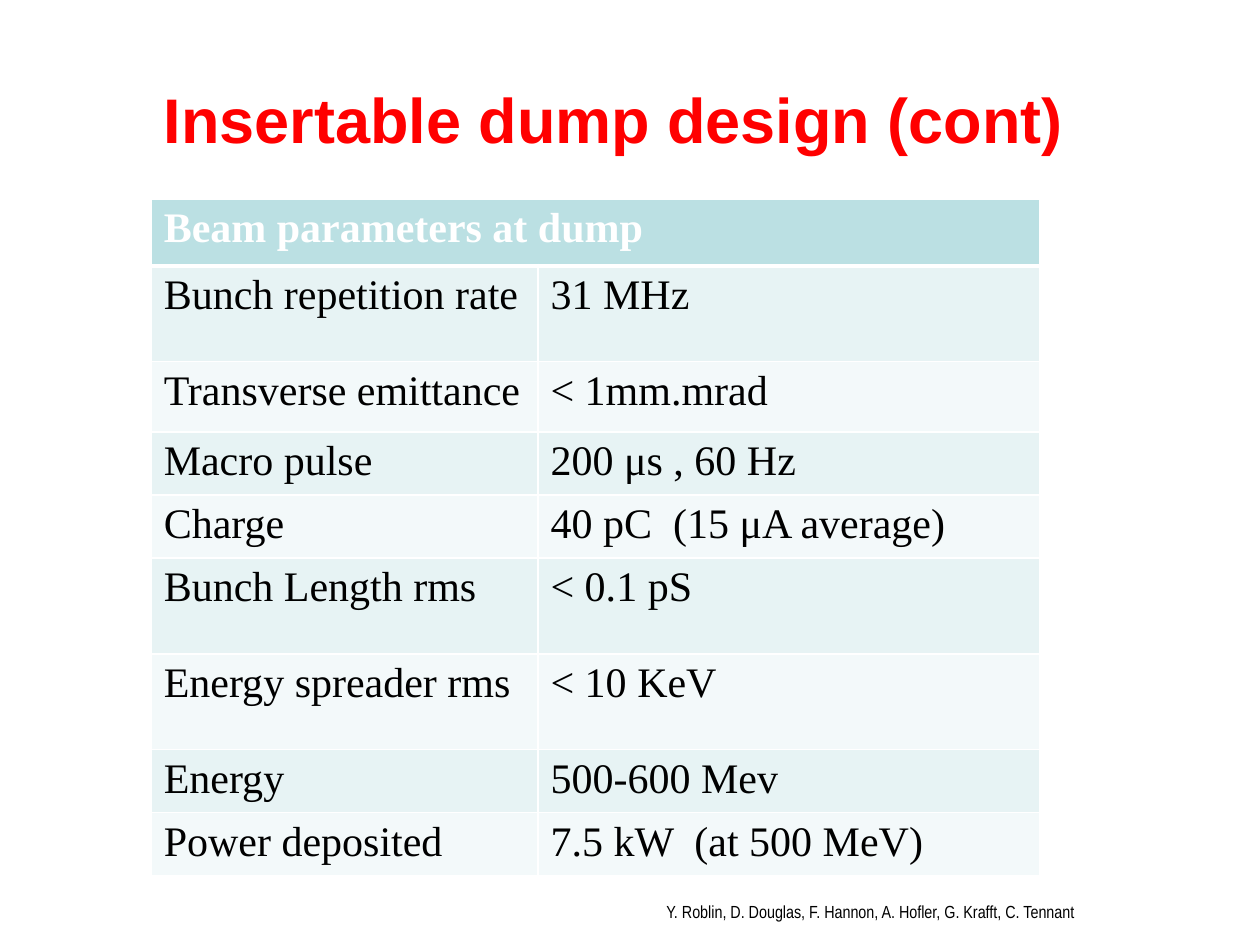
from lxml.etree import SubElement
from pptx import Presentation
from pptx.dml.color import RGBColor
from pptx.enum.text import MSO_ANCHOR, PP_ALIGN
from pptx.oxml import parse_xml
from pptx.oxml.ns import nsdecls
from pptx.util import Inches, Pt

RED = RGBColor(0xFF, 0x00, 0x00)
BLACK = RGBColor(0x00, 0x00, 0x00)
WHITE = RGBColor(0xFF, 0xFF, 0xFF)
HEADER_TEAL = RGBColor(0xBB, 0xE0, 0xE3)
BAND_DARK = RGBColor(0xE7, 0xF3, 0xF4)
BAND_LIGHT = RGBColor(0xF3, 0xF9, 0xFA)

TABLE_HEADING = "Beam parameters at dump"
BEAM_PARAMETERS = [
    ("Bunch repetition rate", "31 MHz"),
    ("Transverse emittance", "< 1mm.mrad"),
    ("Macro pulse", "200 μs , 60 Hz"),
    ("Charge", "40 pC  (15 μA average)"),
    ("Bunch Length rms", "< 0.1 pS"),
    ("Energy spreader rms", "< 10 KeV"),
    ("Energy", "500-600 Mev"),
    ("Power deposited", "7.5 kW  (at 500 MeV)"),
]
COLUMN_WIDTHS = [3.07, 3.98]
ROW_HEIGHTS = [0.53, 0.76, 0.56, 0.49, 0.49, 0.76, 0.76, 0.49, 0.49]


class SlideBuilder:
    title_font = "Arial"
    table_font = "Times New Roman"
    credit_font = "Arial Narrow"

    def __init__(self, slide):
        self.slide = slide

    def add_run(self, paragraph, text, font, size, color, bold=False):
        run = paragraph.add_run()
        run.text = text
        run.font.name = font
        run.font.size = Pt(size)
        run.font.bold = bold
        run.font.color.rgb = color

    def add_text(self, text, left, top, width, height, font, size, color,
                 bold=False, align=PP_ALIGN.LEFT, anchor=MSO_ANCHOR.TOP):
        box = self.slide.shapes.add_textbox(
            Inches(left), Inches(top), Inches(width), Inches(height))
        frame = box.text_frame
        frame.word_wrap = True
        frame.vertical_anchor = anchor
        paragraph = frame.paragraphs[0]
        paragraph.alignment = align
        self.add_run(paragraph, text, font, size, color, bold)

    def set_borders(self, cell, top=1, bottom=1):
        """Draw white cell borders; widths are in points."""
        properties = cell._tc.get_or_add_tcPr()
        widths = {"lnL": 1, "lnR": 1, "lnT": top, "lnB": bottom}
        for index, (tag, width) in enumerate(widths.items()):
            line = parse_xml(
                f'<a:{tag} {nsdecls("a")} w="{Pt(width)}"><a:solidFill>'
                f'<a:srgbClr val="{WHITE}"/></a:solidFill></a:{tag}>')
            properties.insert(index, line)

    def style_cell(self, cell, fill, top=1, bottom=1):
        cell.fill.solid()
        cell.fill.fore_color.rgb = fill
        self.set_borders(cell, top, bottom)

    def add_parameter_table(self, left, top):
        frame = self.slide.shapes.add_table(
            len(ROW_HEIGHTS), len(COLUMN_WIDTHS), Inches(left), Inches(top),
            Inches(sum(COLUMN_WIDTHS)), Inches(sum(ROW_HEIGHTS)))
        table = frame.table
        for column, width in zip(table.columns, COLUMN_WIDTHS):
            column.width = Inches(width)
        for row, height in zip(table.rows, ROW_HEIGHTS):
            row.height = Inches(height)

        heading = table.cell(0, 0)
        heading.merge(table.cell(0, 1))
        for cell in table.rows[0].cells:
            self.style_cell(cell, HEADER_TEAL, bottom=3)
        self.add_run(heading.text_frame.paragraphs[0], TABLE_HEADING,
                     self.table_font, 24, WHITE, bold=True)

        for row_index, texts in enumerate(BEAM_PARAMETERS, start=1):
            fill = BAND_DARK if row_index % 2 else BAND_LIGHT
            for column_index, text in enumerate(texts):
                cell = table.cell(row_index, column_index)
                self.style_cell(cell, fill, top=3 if row_index == 1 else 1)
                self.add_run(cell.text_frame.paragraphs[0], text,
                             self.table_font, 24, BLACK)


def main():
    presentation = Presentation()
    presentation.slide_width = Inches(10)
    presentation.slide_height = Inches(7.5)
    builder = SlideBuilder(
        presentation.slides.add_slide(presentation.slide_layouts[6]))

    builder.add_text("Y. Roblin, D. Douglas, F. Hannon, A. Hofler, "
                     "G. Krafft, C. Tennant", 5.19, 7.1, 3.54, 0.27,
                     builder.credit_font, 10, BLACK)
    builder.add_text("Insertable dump design (cont)", 0.62, 0.31, 8.5, 1.25,
                     builder.title_font, 36, RED, bold=True,
                     align=PP_ALIGN.CENTER, anchor=MSO_ANCHOR.MIDDLE)
    builder.add_parameter_table(1.2, 1.58)
    presentation.save("out.pptx")


if __name__ == "__main__":
    main()
